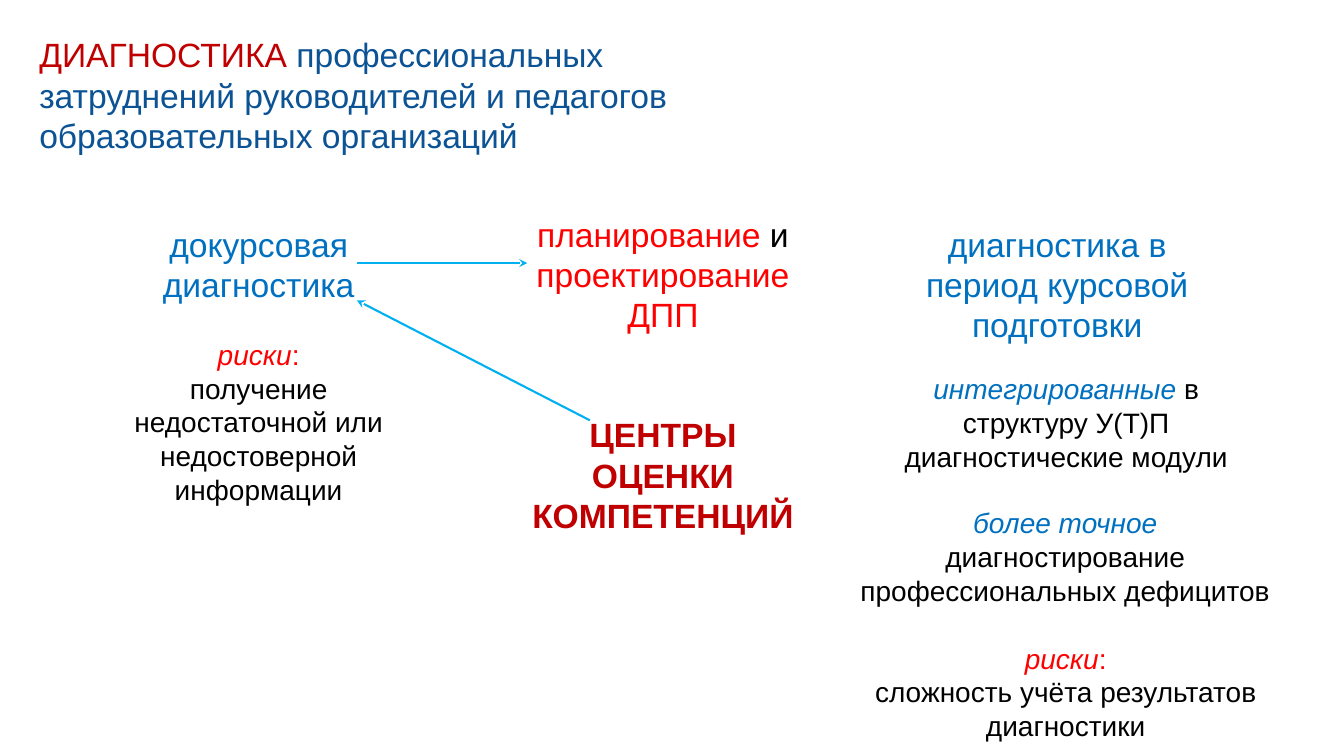
from lxml import etree
from pptx import Presentation, util as u
from pptx.dml.color import RGBColor
from pptx.enum import shapes, text
from pptx.oxml import ns

PX = 9144  # EMU per px, 100 px to the inch
HEX = {"dark": "C00000", "navy": "0B5394", "red": "FF0000",
       "blue": "0070C0", "black": "000000", "sky": "00B0F0"}


def color(name):
    return RGBColor.from_string(HEX[name])


def fill_text(shape, area, size, paras, align=text.PP_ALIGN.CENTER):
    """Place a shape and write paragraphs of (text, colour, style) runs."""
    shape.left, shape.top, shape.width, shape.height = [n * PX for n in area]
    frame = shape.text_frame
    frame.word_wrap = True
    frame.auto_size = text.MSO_AUTO_SIZE.NONE
    frame.vertical_anchor = text.MSO_ANCHOR.TOP
    for i, runs in enumerate(paras):
        para = frame.add_paragraph() if i else frame.paragraphs[0]
        para.alignment = align
        para.font.name = "Arial"
        para.font.size = u.Pt(size)
        for words, tint, style in runs:
            run = para.add_run()
            run.text = words
            run.font.color.rgb = color(tint)
            if style == "i":
                run.font.italic = True
            elif style == "b":
                run.font.bold = True


deck = Presentation()
deck.slide_width, deck.slide_height = 1333 * PX, 750 * PX
slide = deck.slides.add_slide(deck.slide_layouts[5])

fill_text(slide.shapes.title, (29, 29, 721, 131), 24, [[
    ("ДИАГНОСТИКА ", "dark", ""),
    ("профессиональных затруднений руководителей и педагогов "
     "образовательных организаций", "navy", "")]], text.PP_ALIGN.LEFT)

risks = [("риски", "red", "i"), (":", "red", "")]
boxes = [
    ((493, 207, 329, 131), 24, [[("планирование", "red", ""), (" и ", "black", ""),
                                 ("проектирование ДПП", "red", "")]]),
    ((92, 217, 329, 91), 24, [[("докурсовая диагностика", "blue", "")]]),
    ((884, 217, 329, 131), 24,
     [[("диагностика в период курсовой подготовки", "blue", "")]]),
    ((92, 330, 329, 178), 20,
     [risks, [("получение недостаточной или недостоверной информации", "black", "")]]),
    ((884, 364, 347, 111), 20,
     [[("интегрированные", "blue", "i"),
       (" в структуру У(Т)П диагностические модули", "black", "")]]),
    ((837, 497, 439, 111), 20,
     [[("более точное ", "blue", "i"),
       ("диагностирование профессиональных дефицитов", "black", "")]]),
    ((855, 631, 404, 111), 20,
     [risks, [("сложность учёта результатов диагностики", "black", "")]]),
    ((493, 406, 329, 131), 24,
     [[("ЦЕНТРЫ", "dark", "b")], [("ОЦЕНКИ КОМПЕТЕНЦИЙ", "dark", "b")]]),
]
for area, size, paras in boxes:
    fill_text(slide.shapes.add_textbox(0, 0, 0, 0), area, size, paras)

for ends in [(585, 417, 354, 298), (354, 261, 523, 261)]:
    arrow = slide.shapes.add_connector(
        shapes.MSO_CONNECTOR.STRAIGHT, *[n * PX for n in ends])
    arrow.line.color.rgb = color("sky")
    arrow.line.width = u.Pt(1.5)
    etree.SubElement(arrow.line._get_or_add_ln(), ns.qn("a:tailEnd"), type="stealth")
    etree.SubElement(arrow._element.spPr, ns.qn("a:effectLst"))

deck.save("out.pptx")
